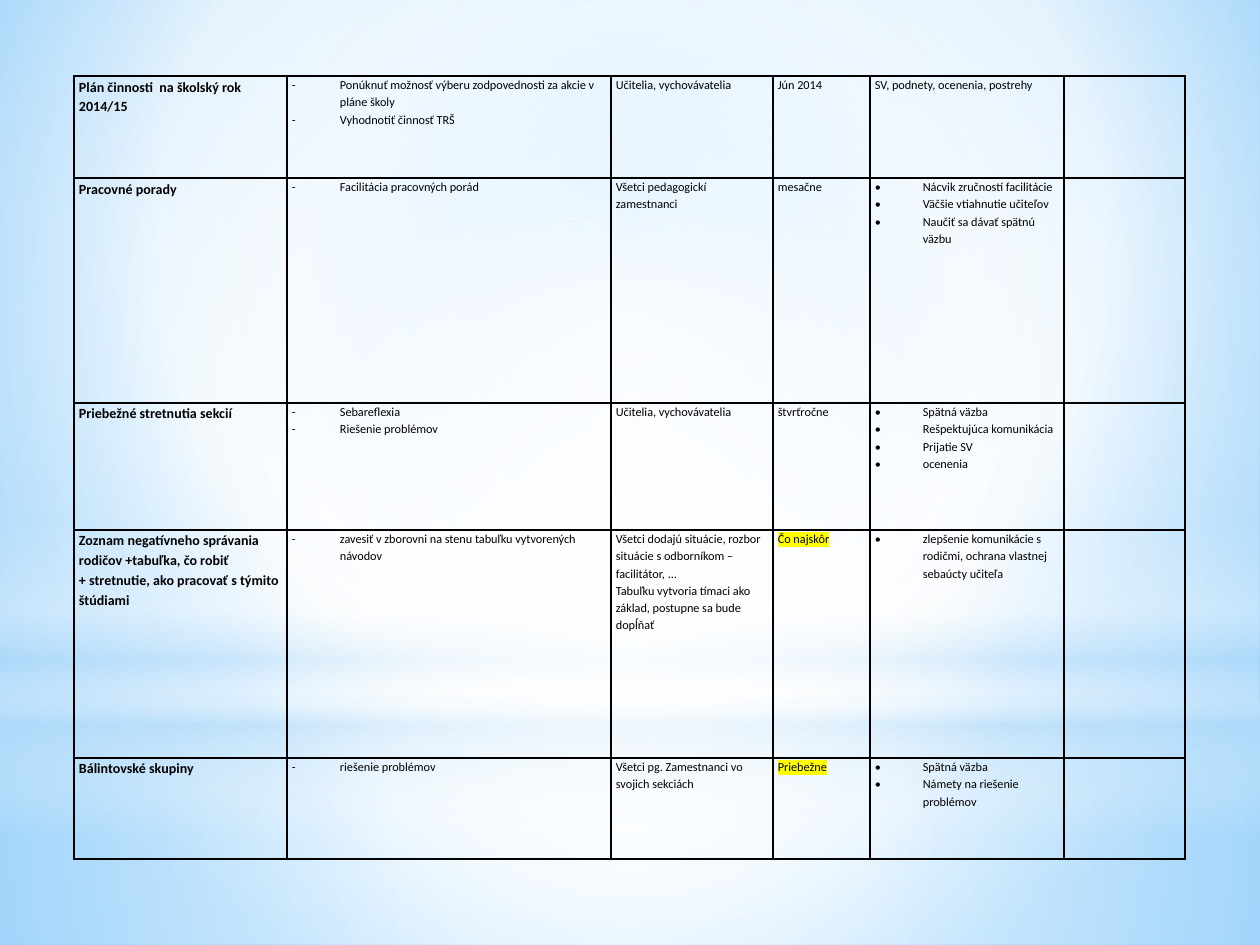
from lxml import etree
from pptx import Presentation
from pptx.dml.color import RGBColor
from pptx.enum.shapes import MSO_SHAPE
from pptx.oxml.ns import qn
from pptx.util import Pt

RECT = MSO_SHAPE.RECTANGLE
OVAL = MSO_SHAPE.OVAL
EMU_PER_PX = 914400 / 126
COLORS = {
    "ink": "000000", "white": "FFFFFF", "mist": "B4DCFA",
    "sky": "9ED5FF", "azure": "5BB9FF", "mark": "FFFF00",
}
CENTER = (50, 50, 50, 50)
COLUMNS = [213, 324, 162, 97, 194, 121]
ROW_HEIGHTS = [102, 225, 127, 228, 101]
BULLETS = {1: "-", 4: "•"}
MARKED = {"Čo najskôr", "Priebežne"}
PLAN = [
    [["Plán činnosti  na školský rok 2014/15"],
     ["Ponúknuť možnosť výberu zodpovednosti za akcie v pláne školy",
      "Vyhodnotiť činnosť TRŠ"],
     ["Učitelia, vychovávatelia"], ["Jún 2014"],
     ["SV, podnety, ocenenia, postrehy"], []],
    [["Pracovné porady"], ["Facilitácia pracovných porád"],
     ["Všetci pedagogickí zamestnanci"], ["mesačne"],
     ["Nácvik zručností facilitácie", "Väčšie vtiahnutie učiteľov",
      "Naučiť sa dávať spätnú väzbu"], []],
    [["Priebežné stretnutia sekcií"], ["Sebareflexia", "Riešenie problémov"],
     ["Učitelia, vychovávatelia"], ["štvrťročne"],
     ["Spätná väzba", "Rešpektujúca komunikácia", "Prijatie SV", "ocenenia"], []],
    [["Zoznam negatívneho správania rodičov +tabuľka, čo robiť",
      "+ stretnutie, ako pracovať s týmito štúdiami"],
     ["zavesiť v zborovni na stenu tabuľku vytvorených návodov"],
     ["Všetci dodajú situácie, rozbor situácie s odborníkom – facilitátor, ...",
      "Tabuľku vytvoria tímaci ako základ, postupne sa bude dopĺňať"],
     ["Čo najskôr"],
     ["zlepšenie komunikácie s rodičmi, ochrana vlastnej sebaúcty učiteľa"], []],
    [["Bálintovské skupiny"], ["riešenie problémov"],
     ["Všetci pg. Zamestnanci vo svojich sekciách"], ["Priebežne"],
     ["Spätná väzba", "Námety na riešenie problémov"], []],
]


def px(length):
    return round(length * EMU_PER_PX)


def add_color(parent, color, opacity=100):
    node = etree.SubElement(parent, qn("a:srgbClr"), val=COLORS[color])
    if opacity < 100:
        etree.SubElement(node, qn("a:alpha"), val=str(opacity * 1000))


class SlideBuilder:
    """Holds the text style and the current slide, and adds elements to it."""

    font = "Calibri"
    heading_size = Pt(8)
    body_size = Pt(7)
    inset = px(5)
    hang = px(48)

    def __init__(self, slide):
        self.slide = slide

    def gradient(self, fill, owner, stops, focus=None):
        fill.gradient()
        grad = owner.find(".//" + qn("a:gradFill"))
        for child in list(grad):
            grad.remove(child)
        stop_list = etree.SubElement(grad, qn("a:gsLst"))
        for position, *color in stops:
            stop = etree.SubElement(stop_list, qn("a:gs"), pos=str(position * 1000))
            add_color(stop, *color)
        if focus:
            radial = etree.SubElement(grad, qn("a:path"))
            radial.set("path", "circle")
            sides = {side: str(value * 1000) for side, value in zip("ltrb", focus)}
            etree.SubElement(radial, qn("a:fillToRect"), sides)
        else:
            etree.SubElement(grad, qn("a:lin"), ang="5400000", scaled="0")

    def background(self, stops, focus):
        self.gradient(self.slide.background.fill, self.slide.element, stops, focus)

    def glow(self, kind, top, height, stops, focus=None):
        shape = self.slide.shapes.add_shape(kind, 0, px(top), px(1260), px(height))
        shape.shadow.inherit = False
        shape.line.fill.background()
        self.gradient(shape.fill, shape.element, stops, focus)

    def table(self, left, top, columns, heights, rows):
        table = self.slide.shapes.add_table(
            len(rows), len(columns), px(left), px(top),
            px(sum(columns)), px(sum(heights))).table
        table.first_row = table.horz_banding = False
        for column, width in zip(table.columns, columns):
            column.width = px(width)
        for r, (height, row) in enumerate(zip(heights, rows)):
            table.rows[r].height = px(height)
            for c, lines in enumerate(row):
                bullet = None if (r, c) == (0, 4) else BULLETS.get(c)
                self.cell(table.cell(r, c), lines, bullet, c == 0)

    def cell(self, cell, lines, bullet, heading):
        cell.fill.background()
        cell.margin_left = cell.margin_right = self.inset
        cell.margin_top = cell.margin_bottom = 0
        properties = cell._tc.get_or_add_tcPr()
        for index, side in enumerate("LRTB"):
            border = etree.Element(qn("a:ln" + side), w=str(Pt(1)))
            add_color(etree.SubElement(border, qn("a:solidFill")), "ink")
            properties.insert(index, border)
        cell.text_frame.text = "\n".join(lines)
        for paragraph in cell.text_frame.paragraphs:
            paragraph.line_spacing = 1.15
            if bullet:
                self.bullet(paragraph, bullet)
            for run in paragraph.runs:
                self.style(run, heading)

    def bullet(self, paragraph, mark):
        properties = paragraph._p.get_or_add_pPr()
        properties.set("marL", str(self.hang))
        properties.set("indent", str(-self.hang))
        etree.SubElement(properties, qn("a:buFont"), typeface=self.font)
        etree.SubElement(properties, qn("a:buChar"), char=mark)

    def style(self, run, heading):
        run.font.name = self.font
        run.font.size = self.heading_size if heading else self.body_size
        run.font.bold = heading
        run.font.color.rgb = RGBColor.from_string(COLORS["ink"])
        if run.text in MARKED:
            highlight = etree.Element(qn("a:highlight"))
            add_color(highlight, "mark")
            run._r.rPr.find(qn("a:solidFill")).addnext(highlight)


def main():
    deck = Presentation()
    deck.slide_width, deck.slide_height = px(1260), px(945)
    page = SlideBuilder(deck.slides.add_slide(deck.slide_layouts[6]))
    page.background([(0, "sky"), (60, "white"), (100, "azure")], (20, 10, 20, 60))
    page.glow(RECT, 703, 242,
              [(0, "white", 91), (37, "white", 76), (100, "mist", 79)], CENTER)
    page.glow(RECT, 0, 703,
              [(0, "white", 89), (48, "white", 62), (100, "mist", 79)], CENTER)
    page.glow(RECT, 519, 315,
              [(0, "white", 0), (29, "white", 30), (45, "mist", 40),
               (55, "white", 26), (65, "mist", 60), (100, "white", 0)])
    page.glow(OVAL, 221, 703, [(0, "white"), (56, "white", 0)], CENTER)
    page.table(74, 76, COLUMNS, ROW_HEIGHTS, PLAN)
    deck.save("out.pptx")


if __name__ == "__main__":
    main()
